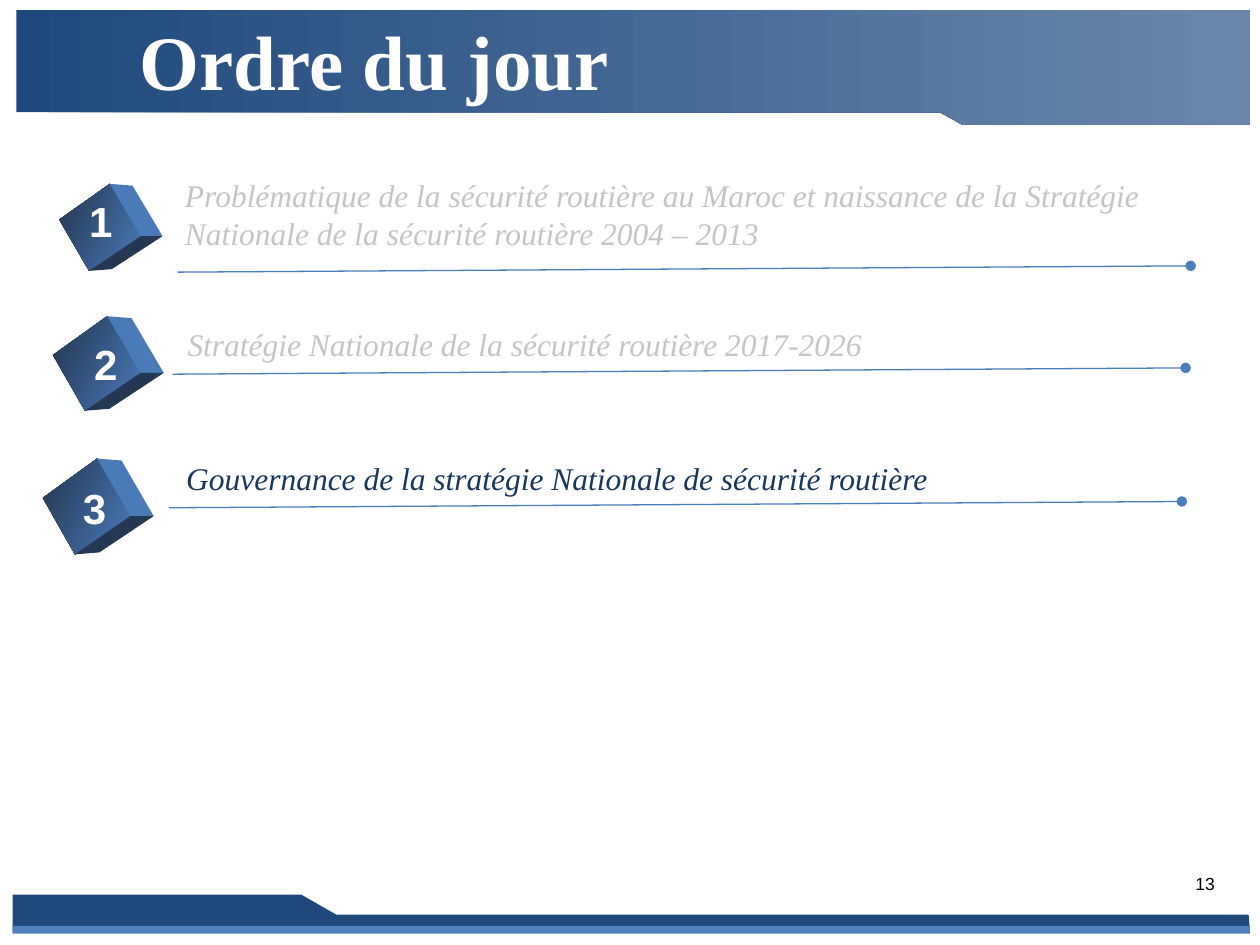
from lxml import etree
from pptx import Presentation
from pptx.dml.color import RGBColor
from pptx.enum.shapes import MSO_CONNECTOR, MSO_SHAPE
from pptx.enum.text import MSO_ANCHOR, PP_ALIGN
from pptx.oxml.ns import qn
from pptx.util import Inches, Pt

STRAIGHT = MSO_CONNECTOR.STRAIGHT
RECT = MSO_SHAPE.RECTANGLE
MIDDLE = MSO_ANCHOR.MIDDLE
LEFT, CENTER, RIGHT = PP_ALIGN.LEFT, PP_ALIGN.CENTER, PP_ALIGN.RIGHT
SERIF, SANS = "Times New Roman", "Arial"

COLORS = {
    "navy": "1F497D", "blue": "4F81BD", "header_end": "6A87AB", "rule": "4B7EBC",
    "cube_dark": "22364F", "cube_light": "4A7AB8", "cube_base": "243853",
    "muted": "C5C5C5", "active": "17375E", "white": "FFFFFF", "black": "000000",
}


def write(sp, text, font=SERIF, size=18, color="black", bold=False, italic=False, align=LEFT):
    tf = sp.text_frame
    tf.word_wrap = True
    p = tf.paragraphs[0]
    p.alignment = align
    r = p.add_run()
    r.text = text
    r.font.name = font
    r.font.size = Pt(size)
    r.font.bold = bold
    r.font.italic = italic
    r.font.color.rgb = RGBColor.from_string(COLORS[color])


def polygon(points, color, end_color=None, angle=0):
    points = [(Inches(x), Inches(y)) for x, y in points]
    fb = s.shapes.build_freeform(*points[0])
    fb.add_line_segments(points[1:], close=True)
    sp = fb.convert_to_shape()
    sp.shadow.inherit = False
    sp.line.fill.background()
    if end_color:
        sp.fill.gradient()
        sp.fill.gradient_angle = angle
        for stop, name, place in zip(sp.fill.gradient_stops, (color, end_color), (0, 1)):
            stop.color.rgb = RGBColor.from_string(COLORS[name])
            stop.position = place
    else:
        sp.fill.solid()
        sp.fill.fore_color.rgb = RGBColor.from_string(COLORS[color])


prs = Presentation()
prs.slide_width, prs.slide_height = Inches(10), Inches(7.5)
s = prs.slides.add_slide(prs.slide_layouts[5])

polygon([(0.1, 7.4), (9.92, 7.39), (9.91, 7.26), (2.67, 7.26), (2.39, 7.1), (0.1, 7.1)], "navy")
polygon([(9.92, 0.08), (0.13, 0.08), (0.13, 0.89), (7.46, 0.89), (7.64, 0.99), (9.92, 0.99)],
        "navy", "header_end")
sp = s.shapes.add_shape(RECT, Inches(0.1), Inches(7.35), Inches(9.82), Inches(0.06))
sp.shadow.inherit = False
sp.fill.solid()
sp.fill.fore_color.rgb = RGBColor.from_string(COLORS["blue"])
sp.line.fill.background()

title = s.shapes.title
title.left, title.top, title.width, title.height = Inches(0.86), 0, Inches(7.08), Inches(0.95)
title.text_frame.vertical_anchor = MIDDLE
title.text_frame.margin_left = Inches(0.25)
write(title, "Ordre du jour", size=44, color="white", bold=True)
title._element.getparent().append(title._element)

FACES = [
    ([(0, 0.41), (0.49, 0), (0.79, 0.6), (0.29, 1)], "cube_dark", "cube_light"),
    ([(0.49, 0), (0.71, 0.02), (1, 0.6), (0.79, 0.6)], "cube_light", None),
    ([(0.79, 0.6), (1, 0.6), (0.51, 0.98), (0.29, 1)], "cube_base", None),
]
ITEMS = [
    ("Problématique de la sécurité routière au Maroc et naissance de la Stratégie "
     "Nationale de la sécurité routière 2004 – 2013",
     "muted", (1.37, 1.35, 0.71), (1.41, 2.16), (0.47, 1.46, 0.82, 0.69), (0.61, 1.5)),
    ("Stratégie Nationale de la sécurité routière 2017-2026",
     "muted", (1.39, 2.53, 0.4), (1.37, 2.97), (0.42, 2.51, 0.88, 0.75), (0.65, 2.64)),
    ("Gouvernance de la stratégie Nationale de sécurité routière",
     "active", (1.38, 3.59, 0.4), (1.34, 4.03), (0.34, 3.64, 0.88, 0.76), (0.56, 3.78)),
]

for number, (text, color, place, rule, cube, label) in enumerate(ITEMS, 1):
    x, y = rule
    line = s.shapes.add_connector(STRAIGHT, Inches(x), Inches(y), Inches(x + 8.04), Inches(y - 0.05))
    line.line.color.rgb = RGBColor.from_string(COLORS["rule"])
    line.line.width = Pt(0.75)
    etree.SubElement(line.line._get_or_add_ln(), qn("a:tailEnd"), type="oval")
    etree.SubElement(line._element.spPr, qn("a:effectLst"))

    x, y, w, h = cube
    for points, start, end in FACES:
        polygon([(x + w * u, y + h * v) for u, v in points], start, end, 335)

    x, y = label
    sp = s.shapes.add_textbox(Inches(x), Inches(y), Inches(0.38), Inches(0.5))
    sp.text_frame.margin_left = sp.text_frame.margin_right = 0
    write(sp, str(number), SANS, 24, "white", bold=True, align=CENTER)

    x, y, h = place
    sp = s.shapes.add_textbox(Inches(x), Inches(y), Inches(8.4), Inches(h))
    write(sp, text, color=color, italic=True)

sp = s.shapes.add_textbox(Inches(7.97), Inches(6.88), Inches(1.77), Inches(0.32))
write(sp, "13", SANS, 10, align=RIGHT)

prs.save("out.pptx")
